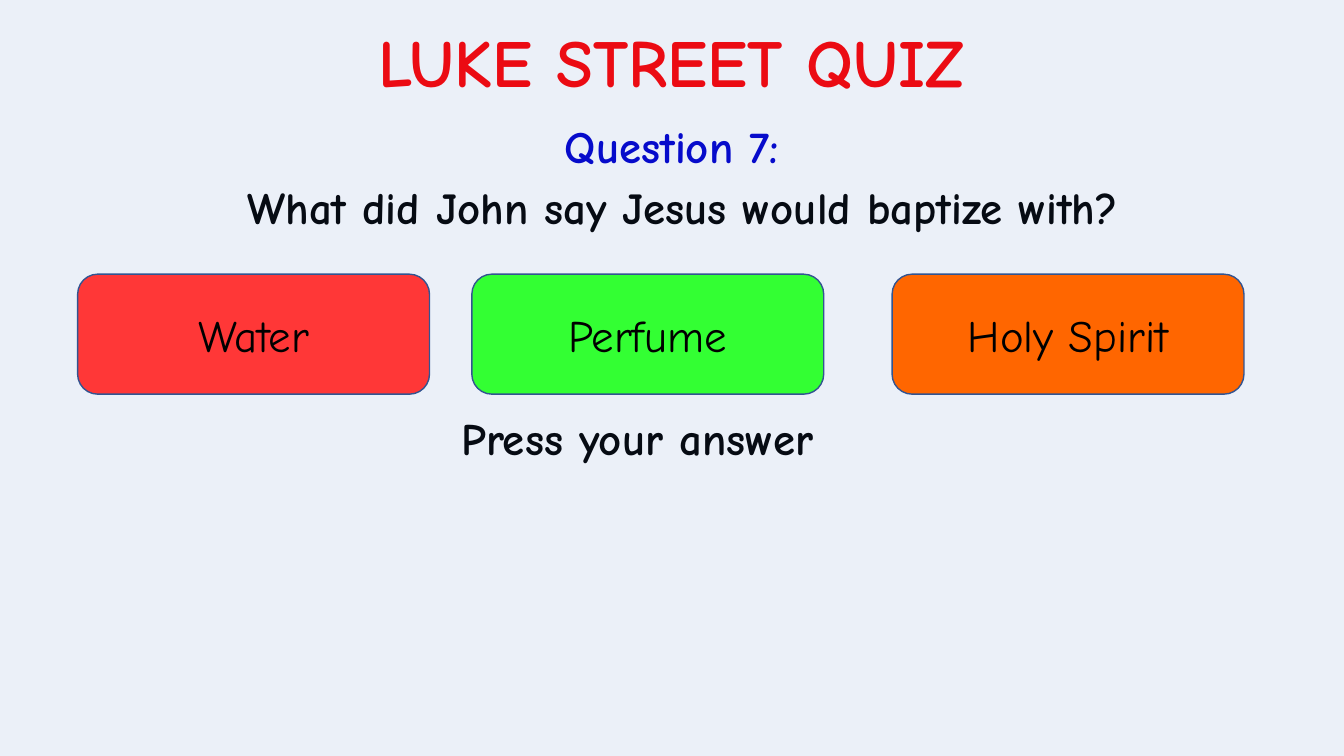
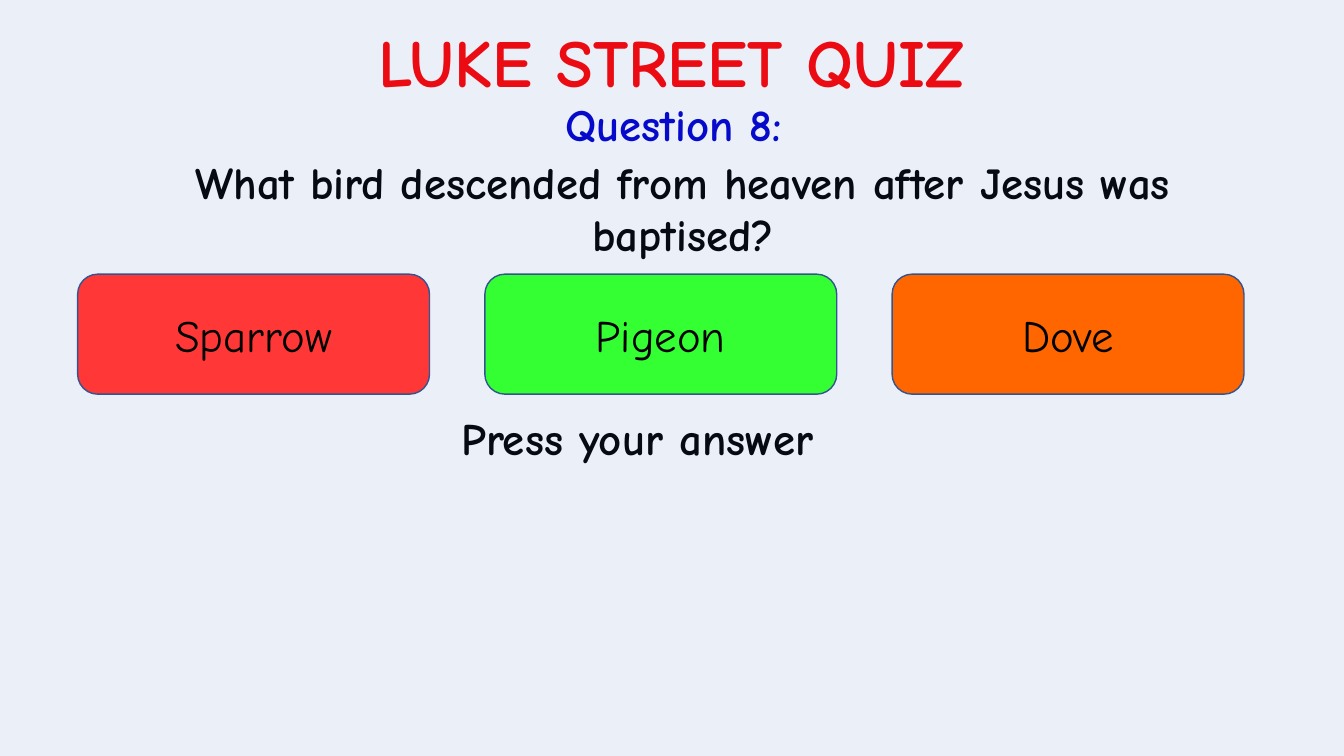
from lxml import etree
from pptx import Presentation
from pptx.dml.color import RGBColor
from pptx.enum.shapes import MSO_SHAPE
from pptx.enum.text import MSO_ANCHOR, MSO_AUTO_SIZE, PP_ALIGN
from pptx.oxml.ns import qn
from pptx.util import Inches, Pt

W, H = Inches(13.33), Inches(7.5)
FONT = "Comic Neue"
COLORS = {
    "title": "FF0000", "title_edge": "0000FF", "label": "0000CC",
    "text": "000000", "veil": "4472C4", "edge": "325491",
}
ANSWER_FILLS = ["FF3737", "33FF33", "FF6600"]

# Places are left, top, width, height in percent of the slide
TITLE = (23.4, 2, 53.1, 12.13)
PROMPT = (33.6, 54.53, 50.49, 9.6)
ANSWER = (5.78, 36.27, 26.18, 15.87)
ANSWER_STEP = 30.3

QUESTIONS = [
    {"label": "Question 7:", "label_at": (33.46, 15.07, 33.08, 8.53),
     "text": "What did John say Jesus would baptize with?",
     "text_at": (7.43, 23.6, 86.8, 15.87), "leading": Pt(36),
     "veil_at": (-6.38, -10.53, 106.45, 117.87),
     "answers": ["Water", "Perfume", "Holy Spirit"], "shifts": [0, -0.97, 0]},
    {"label": "Question 8:", "label_at": (33.6, 12.13, 33.08, 8.53),
     "text": "What bird descended from heaven after Jesus was baptised?",
     "text_at": (7.43, 20.13, 86.8, 15.87), "leading": Pt(37),
     "veil_at": (-2.33, -10.93, 106.45, 117.87),
     "answers": ["Sparrow", "Pigeon", "Dove"], "shifts": [0, 0, 0]},
]


def rgb(value):
    return RGBColor.from_string(value)


def place(at):
    """Turn percentages of the slide into lengths."""
    return [int(share * full / 100) for share, full in zip(at, (W, H, W, H))]


def write(tf, text, color="text", size=32, bold=True, **paragraph):
    p = tf.paragraphs[0]
    for name, value in paragraph.items():
        setattr(p, name, value)
    r = p.add_run()
    r.text = text
    for name, value in {"name": FONT, "size": Pt(size), "bold": bold}.items():
        setattr(r.font, name, value)
    r.font.color.rgb = rgb(COLORS[color])
    return r


def add_title(slide):
    s = slide.shapes.title
    s.left, s.top, s.width, s.height = place(TITLE)
    tf = s.text_frame
    frame = {"word_wrap": False, "vertical_anchor": MSO_ANCHOR.TOP,
             "auto_size": MSO_AUTO_SIZE.SHAPE_TO_FIT_TEXT}
    for name, value in frame.items():
        setattr(tf, name, value)
    r = write(tf, "LUKE STREET QUIZ", "title", 48, alignment=PP_ALIGN.CENTER)
    # Letter outline
    ln = etree.Element(qn("a:ln"), w=str(Pt(1.06)))
    fill = etree.SubElement(ln, qn("a:solidFill"))
    etree.SubElement(fill, qn("a:srgbClr"), val=COLORS["title_edge"])
    r.font._element.insert(0, ln)


def add_text(slide, at, text, color="text", **paragraph):
    tf = slide.shapes.add_textbox(*place(at)).text_frame
    tf.word_wrap = True
    write(tf, text, color, **paragraph)


def add_box(slide, kind, at, fill):
    s = slide.shapes.add_shape(kind, *place(at))
    s.shadow.inherit = False
    s.fill.solid()
    s.fill.fore_color.rgb = rgb(fill)
    s.line.color.rgb = rgb(COLORS["edge"])
    s.line.width = Pt(1)
    return s


def add_veil(slide, at):
    s = add_box(slide, MSO_SHAPE.RECTANGLE, at, COLORS["veil"])
    color = s._element.spPr.find(qn("a:solidFill")).find(qn("a:srgbClr"))
    etree.SubElement(color, qn("a:alpha"), val="10000")


def add_answers(slide, answers, shifts):
    left, top, width, height = ANSWER
    for i, (text, shift, fill) in enumerate(zip(answers, shifts, ANSWER_FILLS)):
        at = (left + i * ANSWER_STEP + shift, top, width, height)
        s = add_box(slide, MSO_SHAPE.ROUNDED_RECTANGLE, at, fill)
        s.text_frame.vertical_anchor = MSO_ANCHOR.MIDDLE
        write(s.text_frame, text, bold=False, alignment=PP_ALIGN.CENTER)


def add_question(prs, q):
    slide = prs.slides.add_slide(prs.slide_layouts.get_by_name("Title Only"))
    add_title(slide)
    add_text(slide, q["text_at"], q["text"], alignment=PP_ALIGN.CENTER,
             line_spacing=q["leading"], space_before=Pt(10))
    add_text(slide, PROMPT, "Press your answer",
             line_spacing=0.9, space_before=Pt(7.5))
    add_text(slide, q["label_at"], q["label"], "label",
             alignment=PP_ALIGN.CENTER)
    # The tint lies over the texts and under the answers
    add_veil(slide, q["veil_at"])
    add_answers(slide, q["answers"], q["shifts"])


def main():
    prs = Presentation()
    prs.slide_width, prs.slide_height = W, H
    for q in QUESTIONS:
        add_question(prs, q)
    prs.save("out.pptx")


if __name__ == "__main__":
    main()
